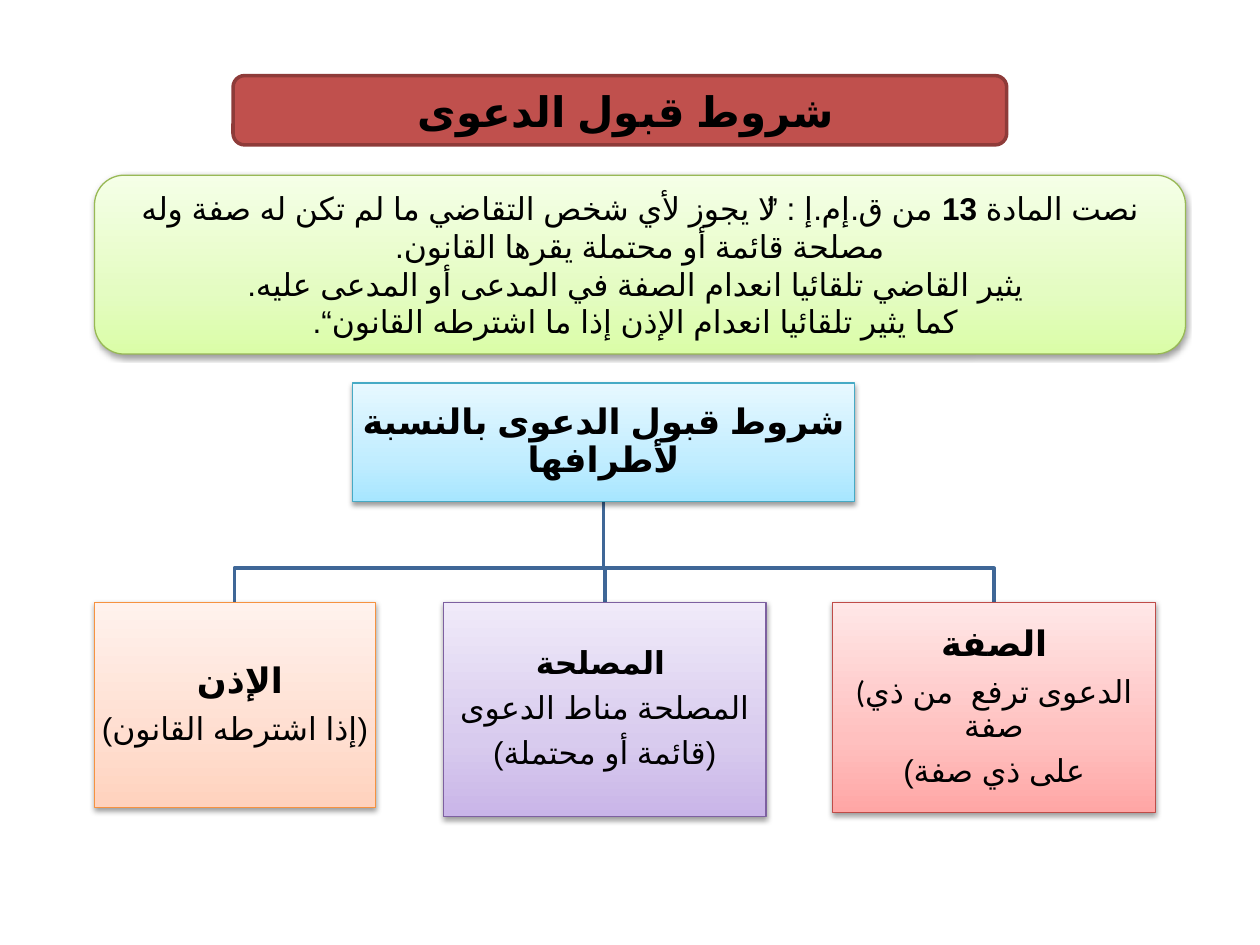
from lxml.etree import SubElement
from pptx import Presentation
from pptx.dml.color import RGBColor
from pptx.enum.shapes import MSO_SHAPE
from pptx.enum.text import MSO_ANCHOR, PP_ALIGN
from pptx.oxml import parse_xml
from pptx.oxml.ns import nsdecls, qn
from pptx.util import Pt

PX = 9144

COLORS = {
    "text": "000000",
    "banner": "C0504D",
    "banner_line": "8E3B39",
    "branch": "3F6797",
}

GRADIENTS = {
    "green": ("DAFDA7", "E4FCC2", "F5FFE7", "98B955"),
    "blue": ("A7E6FF", "C1EDFF", "E7F8FF", "46AAC5"),
    "orange": ("FFD2BD", "FFDED0", "FFF2ED", "F69240"),
    "purple": ("C9B5E8", "D8CBEE", "F0EAF9", "7D60A0"),
    "red": ("FFA6A5", "FFC0BF", "FFE7E7", "BF4C48"),
}

ROOT = ((280, 304, 398, 94), "blue", [("شروط قبول الدعوى بالنسبة لأطرافها", 20, True, False)])

LEAVES = [
    ((75, 478, 223, 163), "orange", [
        ("الإذن ", 20, True, True),
        ("(إذا اشترطه القانون)", 18, False, True),
    ]),
    ((352, 478, 256, 170), "purple", [
        (" المصلحة", 18, True, True),
        ("المصلحة مناط الدعوى", 18, False, True),
        ("(قائمة أو محتملة)", 18, False, True),
    ]),
    ((661, 478, 256, 167), "red", [
        ("الصفة", 20, True, True),
        ("(الدعوى ترفع  من ذي صفة", 18, False, False),
        ("على ذي صفة)", 18, False, True),
    ]),
]

ARTICLE = [
    [("نصت المادة ", False), ("13 ", True),
     ("من ق.إم.إ: ”لا يجوز لأي شخص التقاضي ما لم تكن له صفة وله "
      "مصلحة قائمة أو محتملة يقرها القانون.", False)],
    [(" يثير القاضي تلقائيا انعدام الصفة في المدعى أو المدعى عليه.", False)],
    [(" كما يثير تلقائيا انعدام الإذن إذا ما اشترطه القانون“.", False)],
]


def add_box(page, bounds, kind, line, weight):
    """Add an outlined preset shape without a shadow, its text frame ready."""
    box = page.shapes.add_shape(kind, *(value * PX for value in bounds))
    box.shadow.inherit = False
    box.line.color.rgb = RGBColor.from_string(line)
    box.line.width = Pt(weight)
    box.text_frame.word_wrap = True
    box.text_frame.vertical_anchor = MSO_ANCHOR.MIDDLE
    return box


def add_gradient_box(page, bounds, kind, tone):
    """Add a box with a three-stop vertical gradient and a soft shadow."""
    *stops, line = GRADIENTS[tone]
    box = add_box(page, bounds, kind, line, 0.75)
    stop_xml = "".join(
        f'<a:gs pos="{place}"><a:srgbClr val="{color}"/></a:gs>'
        for place, color in zip((0, 35000, 100000), stops))
    properties = box.element.spPr
    properties.insert(2, parse_xml(
        f'<a:gradFill {nsdecls("a")} rotWithShape="1"><a:gsLst>{stop_xml}</a:gsLst>'
        '<a:lin ang="16200000" scaled="0"/></a:gradFill>'))
    properties.effectLst.append(parse_xml(
        f'<a:outerShdw {nsdecls("a")} blurRad="40000" dist="20000" dir="5400000" '
        'rotWithShape="0"><a:srgbClr val="000000"><a:alpha val="38000"/>'
        '</a:srgbClr></a:outerShdw>'))
    return box


def add_para(frame, index, rtl=True):
    """Return a centred paragraph, taking the frame's first one for index 0."""
    para = frame.add_paragraph() if index else frame.paragraphs[0]
    para.alignment = PP_ALIGN.CENTER
    if rtl:
        para._p.get_or_add_pPr().set("rtl", "1")
    return para


def add_text(para, text, size=18, bold=False):
    """Add one formatted Arabic span to a paragraph."""
    span = para.add_run()
    span.text = text
    span.font.name = "Calibri"
    span.font.size = Pt(size)
    span.font.bold = bold
    span.font.color.rgb = RGBColor.from_string(COLORS["text"])
    properties = span._r.get_or_add_rPr()
    properties.set("lang", "ar-DZ")
    SubElement(properties, qn("a:cs")).set("typeface", "Arial")


def draw_banner(page, bounds):
    """Draw the title banner."""
    box = add_box(page, bounds, MSO_SHAPE.ROUNDED_RECTANGLE, COLORS["banner_line"], 2)
    box.fill.solid()
    box.fill.fore_color.rgb = RGBColor.from_string(COLORS["banner"])
    add_text(add_para(box.text_frame, 0), "شروط قبول الدعوى ", size=24, bold=True)


def draw_article(page, bounds):
    """Draw the panel that quotes the article of law."""
    box = add_gradient_box(page, bounds, MSO_SHAPE.ROUNDED_RECTANGLE, "green")
    for index, spans in enumerate(ARTICLE):
        para = add_para(box.text_frame, index)
        for text, bold in spans:
            add_text(para, text, bold=bold)


def draw_node(page, bounds, tone, lines):
    """Draw one box of the tree."""
    frame = add_gradient_box(page, bounds, MSO_SHAPE.RECTANGLE, tone).text_frame
    frame.margin_left = frame.margin_right = frame.margin_top = frame.margin_bottom = PX
    for index, (text, size, bold, rtl) in enumerate(lines):
        para = add_para(frame, index, rtl)
        para.line_spacing = 0.9
        para.space_after = Pt(round(size * 0.35, 1))
        add_text(para, text, size=size, bold=bold)


def draw_branch(page, parent, child):
    """Draw the bent line from the parent's bottom to the child's top."""
    start_x, start_y = parent[0] + parent[2] / 2, parent[1] + parent[3]
    end_x, end_y = child[0] + child[2] / 2, child[1]
    bend_y = start_y + (end_y - start_y) * 2 / 3
    builder = page.shapes.build_freeform(start_x, start_y, scale=PX)
    builder.add_line_segments(
        [(start_x, bend_y), (end_x, bend_y), (end_x, end_y)], close=False)
    branch = builder.convert_to_shape()
    branch.shadow.inherit = False
    branch.fill.background()
    branch.line.color.rgb = RGBColor.from_string(COLORS["branch"])
    branch.line.width = Pt(2)


def draw_tree(page, root, leaves):
    """Draw the root, its leaves and the branches behind them."""
    for leaf in reversed(leaves):
        draw_branch(page, root[0], leaf[0])
    for node in [root, *leaves]:
        draw_node(page, *node)


def main():
    """Build and save the deck."""
    deck = Presentation()
    deck.slide_width, deck.slide_height = 1000 * PX, 750 * PX
    page = deck.slides.add_slide(deck.slide_layouts[6])
    draw_banner(page, (185, 60, 614, 55))
    draw_article(page, (75, 139, 866, 142))
    draw_tree(page, ROOT, LEAVES)
    deck.save("out.pptx")


if __name__ == "__main__":
    main()
